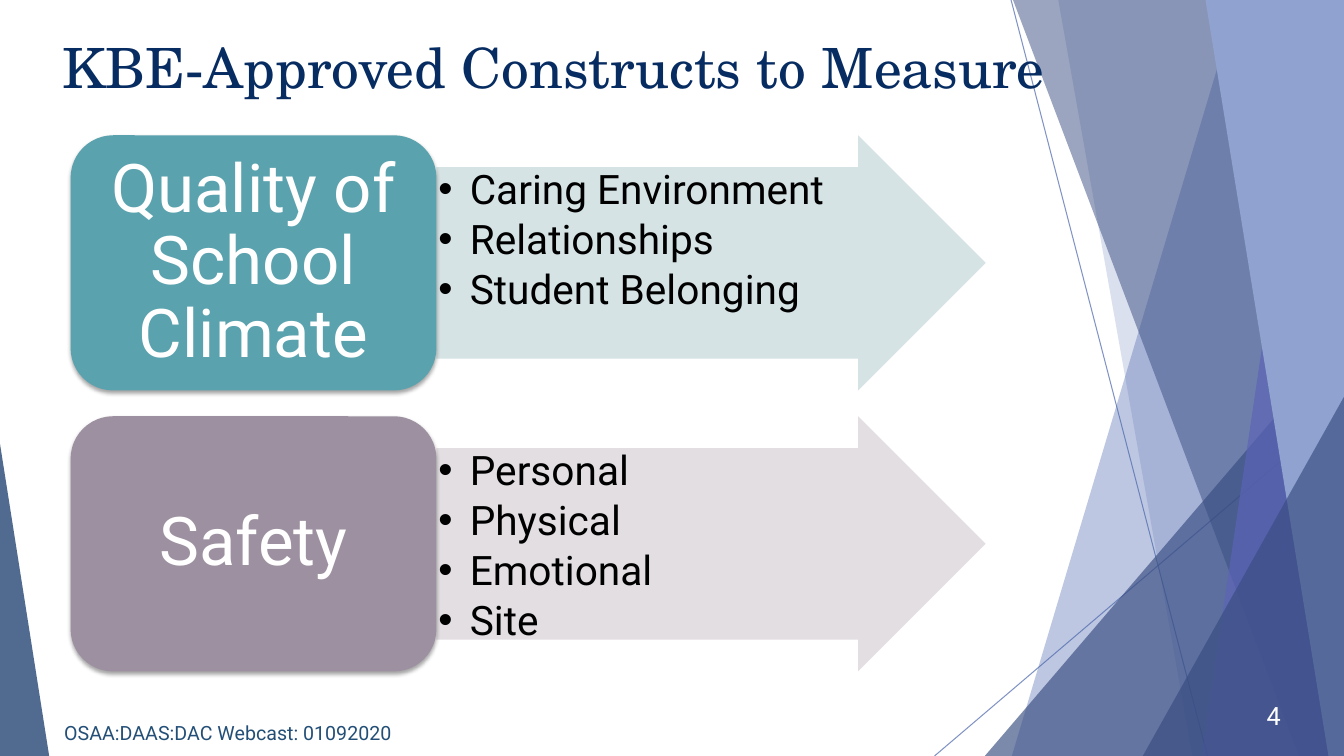
"""Build the slide on approved constructs to measure."""
import lxml.etree
import pptx
import pptx.dml.color
import pptx.enum.shapes
import pptx.enum.text
import pptx.oxml.ns
import pptx.util

Cm, Pt = pptx.util.Cm, pptx.util.Pt
qn = pptx.oxml.ns.qn
MSO = pptx.enum.shapes.MSO_SHAPE
ALIGN = pptx.enum.text.PP_ALIGN
ANCHOR = pptx.enum.text.MSO_ANCHOR

W, H = 33.87, 19.05
COLORS = {
    "navy": "072C62", "blue": "4A66AC", "dark": "384C81", "violet": "5C64B7",
    "light": "90A2CF", "teal": "5AA2AE", "pale teal": "D2E0E3",
    "mauve": "9D90A0", "pale mauve": "DFDBDF", "footer": "234F77",
    "white": "FFFFFF", "black": "000000",
}
TITLE = "KBE-Approved Constructs to Measure"
FOOTER = "OSAA:DAAS:DAC Webcast: 01092020"
PAGE = "4"
CONSTRUCTS = [
    ("Quality of School Climate", "teal", "pale teal",
     ["Caring Environment", "Relationships", "Student Belonging"]),
    ("Safety", "mauve", "pale mauve",
     ["Personal", "Physical", "Emotional", "Site"]),
]
RAYS = [(25.48, 0, 30.43, H), (W, 10.26, 23.55, H)]
FACETS = [
    ("panel", 31.19, 25.5, "blue", 36),
    ("panel", 26.67, 30.05, "blue", 20),
    ("triangle", 24.82, 8.48, W, 1, "dark", 66),
    ("panel", 25.53, 32.74, "dark", 50),
    ("panel", 33.1, 30.28, "violet", 70),
    ("panel", 30.38, 33.48, "light", 100),
    ("triangle", 28.8, 10, W, 1, "dark", 66),
    ("triangle", 0, 11.18, 1.24, 0, "navy", 70),
]
BOX_LEFT, BOX_WIDTH = 1.78, 9.22
ARROW_LEFT, ARROW_WIDTH = BOX_LEFT + BOX_WIDTH, 13.84
ROW_TOP, ROW_HEIGHT, ROW_PITCH = 3.41, 6.43, 7.08
LIST_INSET, LIST_WIDTH = 0.81, 11.43


def rgb(name):
    return pptx.dml.color.RGBColor.from_string(COLORS[name])


def set_alpha(s, percent):
    clr = next(s._element.spPr.iter(qn("a:srgbClr")))
    lxml.etree.SubElement(clr, qn("a:alpha"), val=str(percent * 1000))


def paint(s, color, alpha=100):
    s.shadow.inherit = False
    s.fill.solid()
    s.fill.fore_color.rgb = rgb(color)
    s.line.fill.background()
    if alpha < 100:
        set_alpha(s, alpha)


def drop_shadow(s):
    effects = s._element.spPr.find(qn("a:effectLst"))
    shadow = lxml.etree.SubElement(
        effects, qn("a:outerShdw"), blurRad=str(Pt(3)), dist=str(Pt(2)),
        dir="5400000", rotWithShape="0")
    clr = lxml.etree.SubElement(shadow, qn("a:srgbClr"), val=COLORS["black"])
    lxml.etree.SubElement(clr, qn("a:alpha"), val="35000")


def place(s, left, top, width, height):
    s.left, s.top, s.width, s.height = Cm(left), Cm(top), Cm(width), Cm(height)
    return s


def write(s, *lines, size, color, font="Roboto", align=ALIGN.LEFT,
          anchor=ANCHOR.TOP, spacing=1.0, after=0, bullet=False, insets=(0.25, 0.13)):
    tf = s.text_frame
    tf.word_wrap = True
    tf.auto_size = pptx.enum.text.MSO_AUTO_SIZE.NONE
    tf.vertical_anchor = anchor
    tf.margin_left = tf.margin_right = Cm(insets[0])
    tf.margin_top = tf.margin_bottom = Cm(insets[1])
    for i, line in enumerate(lines):
        p = tf.paragraphs[0] if i == 0 else tf.add_paragraph()
        p.alignment, p.line_spacing = align, spacing
        p.space_before, p.space_after = Pt(0), Pt(after)
        if bullet:
            pPr = p._p.get_or_add_pPr()
            pPr.set("marL", str(Cm(0.79)))
            pPr.set("indent", str(-Cm(0.79)))
            lxml.etree.SubElement(pPr, qn("a:buChar"), char="•")
        r = p.add_run()
        r.text = line
        r.font.size, r.font.name = Pt(size), font
        r.font.color.rgb = rgb(color)


def add_panel(shapes, top_x, bottom_x, color, alpha):
    builder = shapes.build_freeform(Cm(top_x), Cm(0))
    builder.add_line_segments(
        [(Cm(x), Cm(y)) for x, y in [(W, 0), (W, H), (bottom_x, H)]])
    paint(builder.convert_to_shape(), color, alpha)


def add_triangle(shapes, left, top, right, apex, color, alpha):
    s = shapes.add_shape(MSO.ISOSCELES_TRIANGLE, Cm(left), Cm(top),
                         Cm(right - left), Cm(H - top))
    s.adjustments[0] = apex
    paint(s, color, alpha)


def add_backdrop(shapes):
    for ends in RAYS:
        ray = shapes.add_connector(
            pptx.enum.shapes.MSO_CONNECTOR.STRAIGHT, *map(Cm, ends))
        ray.line.color.rgb = rgb("blue")
        ray.line.width = Pt(0.75)
        set_alpha(ray, 70)
        lxml.etree.SubElement(ray._element.spPr, qn("a:effectLst"))
    adders = {"panel": add_panel, "triangle": add_triangle}
    for kind, *facet in FACETS:
        adders[kind](shapes, *facet)


def add_construct(shapes, body, top, name, color, pale, items):
    arrow = place(shapes.add_shape(MSO.RIGHT_ARROW, 0, 0, 0, 0),
                  ARROW_LEFT, top, ARROW_WIDTH, ROW_HEIGHT)
    arrow.adjustments[0], arrow.adjustments[1] = 0.75, 0.5
    paint(arrow, pale, 90)
    shapes._spTree.append(body._element)
    place(body, ARROW_LEFT, top + LIST_INSET, LIST_WIDTH, ROW_HEIGHT - 2 * LIST_INSET)
    write(body, *items, size=29, color="black", spacing=0.9, after=4.3,
          bullet=True, insets=(0.05, 0.05))
    box = place(shapes.add_shape(MSO.ROUNDED_RECTANGLE, 0, 0, 0, 0),
                BOX_LEFT, top, BOX_WIDTH, ROW_HEIGHT)
    paint(box, color)
    drop_shadow(box)
    write(box, name, size=48, color="white", align=ALIGN.CENTER,
          anchor=ANCHOR.MIDDLE, spacing=0.9, insets=(0.5, 0.25))


def main():
    prs = pptx.Presentation()
    prs.slide_width, prs.slide_height = Cm(W), Cm(H)
    slide = prs.slides.add_slide(prs.slide_layouts.get_by_name("Two Content"))
    shapes = slide.shapes
    title, *bodies = slide.placeholders
    add_backdrop(shapes)
    shapes._spTree.append(title._element)
    place(title, 1.32, 0.71, 25.53, 3.66)
    write(title, TITLE, size=39.6, color="navy", font="TeX Gyre Schola")
    for i, (body, construct) in enumerate(zip(bodies, CONSTRUCTS)):
        add_construct(shapes, body, ROW_TOP + i * ROW_PITCH, *construct)
    page = shapes.add_textbox(Cm(30.63), Cm(17.53), Cm(1.9), Cm(1.02))
    write(page, PAGE, size=18, color="white", align=ALIGN.RIGHT)
    footer = shapes.add_textbox(Cm(1.37), Cm(17.96), Cm(11.43), Cm(1.02))
    write(footer, FOOTER, size=14, color="footer", anchor=ANCHOR.MIDDLE)
    prs.save("out.pptx")


if __name__ == "__main__":
    main()
